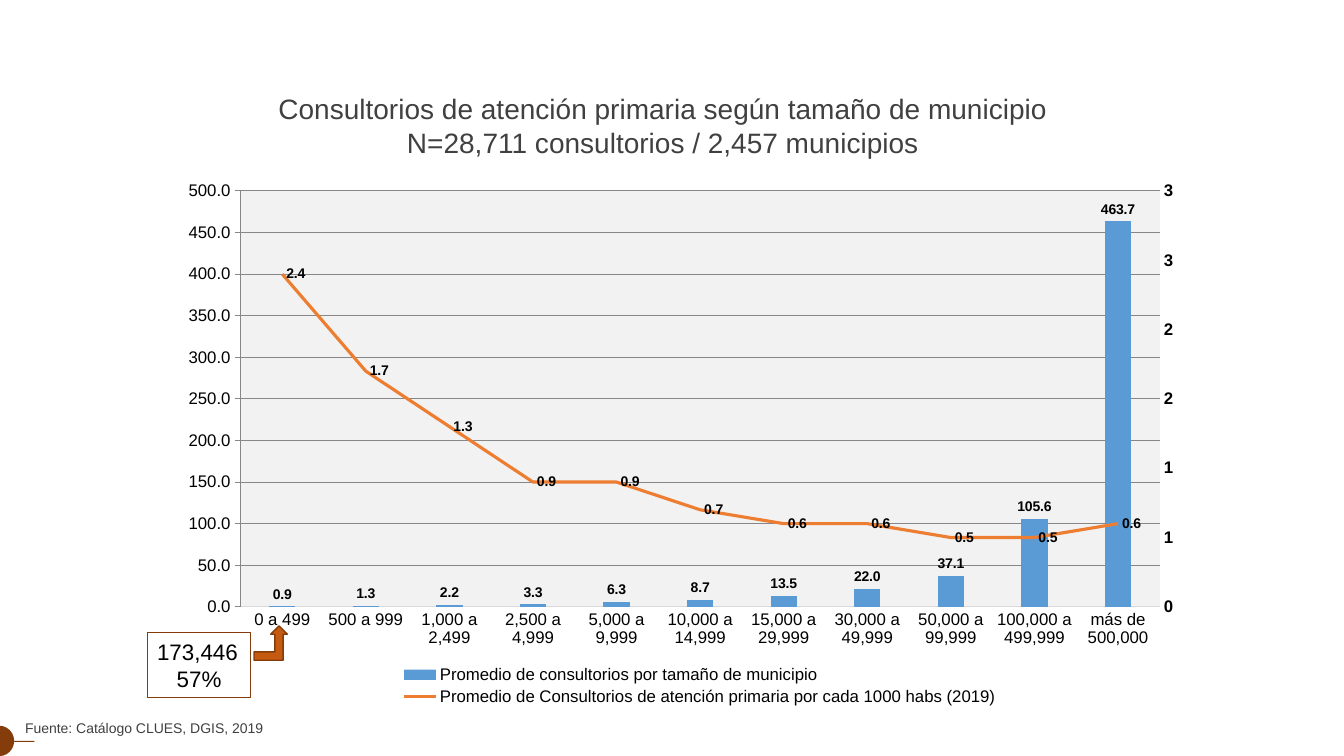
from pptx import Presentation
from pptx import util as u
from pptx.chart import axis as ax
from pptx.chart import data as cd
from pptx.dml import color
from pptx.enum import chart as ch
from pptx.enum import shapes, text
from pptx.oxml import parse_xml
from pptx.oxml.ns import nsdecls, qn

FONT = "Arial"
BLACK, GRAY, GRID, PLOT = "000000", "404040", "D9D9D9", "F2F2F2"
BLUE, ORANGE, RUST, BROWN = "5B9BD5", "ED7D31", "C55A11", "843C0B"
ALIGN = text.PP_ALIGN

CATEGORIES = ["0 a 499", "500 a 999", "1,000 a 2,499", "2,500 a 4,999",
              "5,000 a 9,999", "10,000 a 14,999", "15,000 a 29,999",
              "30,000 a 49,999", "50,000 a 99,999", "100,000 a 499,999",
              "más de 500,000"]
AVERAGE = [0.9, 1.3, 2.2, 3.3, 6.3, 8.7, 13.5, 22, 37.1, 105.6, 463.7]
PER_1000 = [2.4, 1.7, 1.3, 0.9, 0.9, 0.7, 0.6, 0.6, 0.5, 0.5, 0.6]

LINE_CHART = """<c:lineChart %s><c:grouping val="standard"/><c:varyColors val="0"/>
<c:marker val="1"/><c:axId val="501"/><c:axId val="502"/></c:lineChart>"""
RIGHT_AXIS = """<c:valAx %s><c:axId val="502"/><c:scaling/><c:delete val="0"/>
<c:axPos val="r"/><c:numFmt formatCode="0.0" sourceLinked="0"/>
<c:majorTickMark val="out"/><c:minorTickMark val="none"/><c:tickLblPos val="nextTo"/>
<c:crossAx val="501"/><c:crosses val="max"/><c:crossBetween val="between"/></c:valAx>"""
HIDDEN_AXIS = """<c:catAx %s><c:axId val="501"/><c:scaling/><c:delete val="1"/>
<c:axPos val="b"/><c:majorTickMark val="none"/><c:minorTickMark val="none"/>
<c:tickLblPos val="nextTo"/><c:crossAx val="502"/><c:crosses val="autoZero"/></c:catAx>"""
PLOT_LAYOUT = """<c:layout %s><c:manualLayout><c:layoutTarget val="inner"/>
<c:xMode val="edge"/><c:yMode val="edge"/><c:x val="0.05"/><c:y val="0.04"/>
<c:w val="0.9"/><c:h val="0.77"/></c:manualLayout></c:layout>"""
PLOT_FILL = """<c:spPr %s><a:solidFill><a:srgbClr val="{}"/></a:solidFill></c:spPr>"""


def rgb(value):
    return color.RGBColor.from_string(value)


def xml(template):
    return parse_xml(template % nsdecls("c", "a"))


def inches(box):
    return [u.Inches(v) for v in box]


def style_font(font, size, hue=BLACK, bold=False):
    font.name, font.size, font.bold = FONT, u.Pt(size), bold
    font.color.rgb = rgb(hue)


def write(tf, lines, size, hue=GRAY, aligns=(ALIGN.LEFT,), wrap=False):
    tf.word_wrap = wrap
    tf.vertical_anchor = text.MSO_ANCHOR.TOP
    for i, line in enumerate(lines):
        p = tf.paragraphs[0] if i == 0 else tf.add_paragraph()
        p.alignment = aligns[i % len(aligns)]
        r = p.add_run()
        r.text = line
        style_font(r.font, size, hue)


def add_shape(s, kind, box, fill=None, line=None, width=1):
    sp = s.shapes.add_shape(kind, *inches(box))
    sp.shadow.inherit = False
    if fill:
        sp.fill.solid()
        sp.fill.fore_color.rgb = rgb(fill)
    else:
        sp.fill.background()
    if line:
        sp.line.color.rgb = rgb(line)
        sp.line.width = u.Pt(width)
    else:
        sp.line.fill.background()
    return sp


def add_title(s, box):
    sp = s.shapes.title
    sp.left, sp.top, sp.width, sp.height = inches(box)
    write(sp.text_frame, ["Consultorios de atención primaria según tamaño de municipio",
                          "N=28,711 consultorios / 2,457 municipios"],
          20, aligns=(ALIGN.CENTER,))


def add_source(s, box):
    sp = s.shapes.add_textbox(*inches(box))
    write(sp.text_frame, ["Fuente: Catálogo CLUES, DGIS, 2019"], 10)


def scale(axis, top, step):
    axis.minimum_scale, axis.maximum_scale, axis.major_unit = 0, top, step
    axis.format.line.fill.background()
    style_font(axis.tick_labels.font, 12, bold=True)


def label(series, position):
    labels = series.data_labels
    labels.show_value = True
    labels.number_format, labels.number_format_is_linked = "0.0", False
    labels.position = position
    style_font(labels.font, 10, bold=True)


def move_to_right_axis(chart):
    bars = chart.plots[0]._element
    area = bars.getparent()
    ser = bars.findall(qn("c:ser"))[1]
    for flag in ser.findall(qn("c:invertIfNegative")):
        ser.remove(flag)
    line_chart, right = xml(LINE_CHART), xml(RIGHT_AXIS)
    line_chart.find(qn("c:varyColors")).addnext(ser)
    bars.addnext(line_chart)
    area.findall(qn("c:valAx"))[-1].addnext(right)
    right.addnext(xml(HIDDEN_AXIS))
    for old in area.findall(qn("c:layout")):
        area.remove(old)
    area.insert(0, xml(PLOT_LAYOUT))
    area.append(xml(PLOT_FILL.format(PLOT)))
    return ax.ValueAxis(right)


def add_combo_chart(s, box):
    data = cd.CategoryChartData(number_format="0.0")
    data.categories = CATEGORIES
    data.add_series("Promedio de consultorios por tamaño de municipio", AVERAGE)
    data.add_series("Promedio de Consultorios de atención primaria "
                    "por cada 1000 habs (2019)", PER_1000)
    chart = s.shapes.add_chart(ch.XL_CHART_TYPE.COLUMN_CLUSTERED,
                               *inches(box), data).chart
    chart.has_title = False
    style_font(chart.font, 12)
    right = move_to_right_axis(chart)

    cat, val = chart.category_axis, chart.value_axis
    cat.major_tick_mark = val.major_tick_mark = ch.XL_TICK_MARK.NONE
    style_font(cat.tick_labels.font, 12)
    scale(val, 500, 50)
    scale(right, 3, 0.5)
    val.tick_labels.number_format = "0"
    val.tick_labels.number_format_is_linked = False
    for line in (cat.format.line, val.major_gridlines.format.line):
        line.color.rgb, line.width = rgb(GRID), u.Pt(0.75)

    bars, lines = chart.plots
    bars.gap_width, bars.overlap, bars.vary_by_categories = 219, -27, False
    average, per_1000 = bars.series[0], lines.series[0]
    average.format.fill.solid()
    average.format.fill.fore_color.rgb = rgb(BLUE)
    per_1000.format.line.color.rgb = rgb(ORANGE)
    per_1000.format.line.width = u.Pt(2.25)
    per_1000.marker.style = ch.XL_MARKER_STYLE.NONE
    per_1000.smooth = False
    label(average, ch.XL_LABEL_POSITION.OUTSIDE_END)
    label(per_1000, ch.XL_LABEL_POSITION.RIGHT)

    chart.has_legend = True
    chart.legend.position = ch.XL_LEGEND_POSITION.BOTTOM
    chart.legend.include_in_layout = False
    style_font(chart.legend.font, 12)


def add_corner_mark(s, box):
    x, y, w, h = box
    add_shape(s, shapes.MSO_SHAPE.RECTANGLE, (x + 0.17, y + h / 2, 0.32, 0.01), BROWN)
    sp = add_shape(s, shapes.MSO_SHAPE.PIE, box, BROWN)
    sp.adjustments[0], sp.adjustments[1] = 54.22, 162
    sp.rotation = 180


def add_callout(s, box):
    x, y, w, h = box
    add_shape(s, shapes.MSO_SHAPE.BENT_UP_ARROW,
              (x + w + 0.03, y - 0.07, 0.33, 0.34), RUST, BROWN)
    sp = add_shape(s, shapes.MSO_SHAPE.RECTANGLE, box, line=BROWN, width=0.75)
    write(sp.text_frame, ["173,446", "57%"], 16, BLACK,
          aligns=(ALIGN.LEFT, ALIGN.CENTER), wrap=True)


def main():
    prs = Presentation()
    prs.slide_width, prs.slide_height = u.Inches(13.33), u.Inches(7.5)
    s = prs.slides.add_slide(prs.slide_layouts[5])
    add_source(s, (0.15, 7.09, 2.58, 0.27))
    add_combo_chart(s, (1.87, 1.68, 10.14, 5.36))
    add_title(s, (2.63, 0.86, 7.89, 0.77))
    add_corner_mark(s, (-0.15, 7.2, 0.29, 0.3))
    add_callout(s, (1.46, 6.28, 1.03, 0.64))
    prs.save("out.pptx")


if __name__ == "__main__":
    main()
